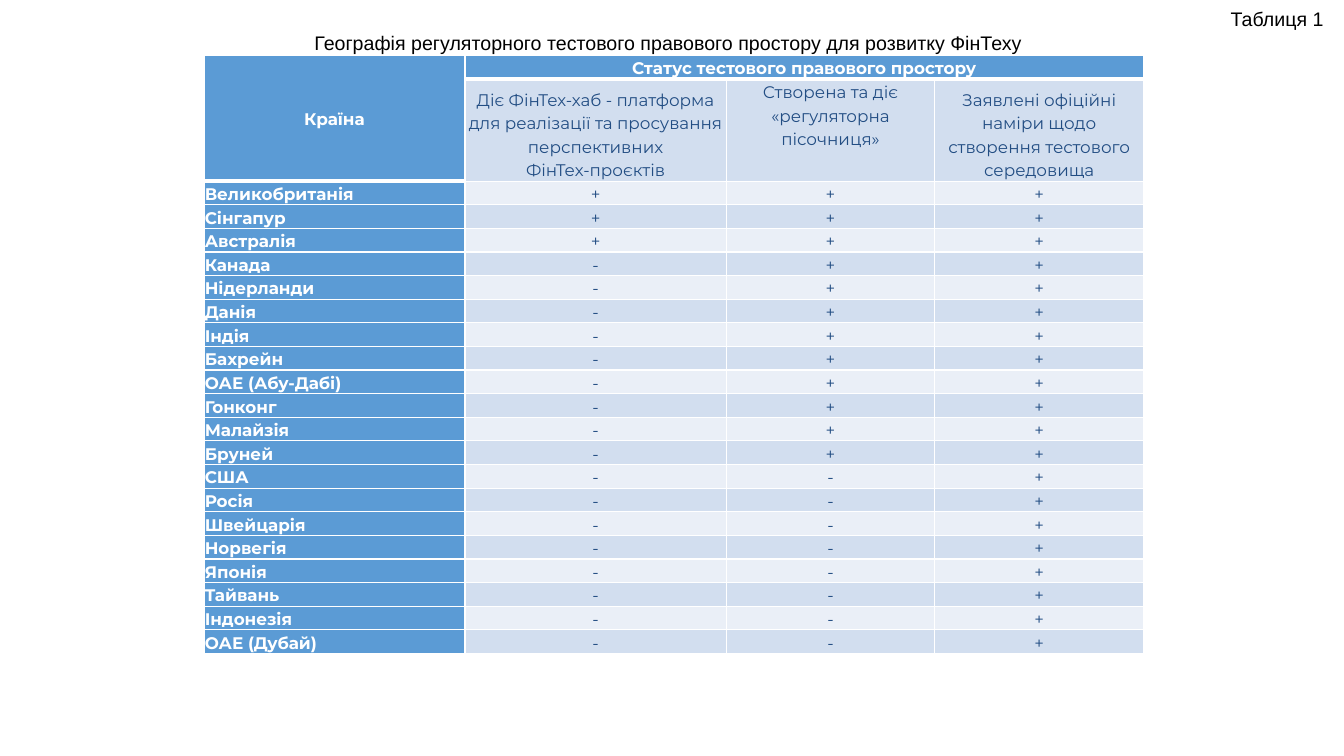
from lxml import etree
from pptx import Presentation, util as u
from pptx.dml import color
from pptx.enum import text
from pptx.oxml import ns

ALIGN = text.PP_ALIGN
ANCHOR = text.MSO_ANCHOR
BLUE, PALE, LIGHT, NAVY = "5B9BD5", "D2DEEF", "EAEFF7", "224D83"
WHITE, BLACK = "FFFFFF", "000000"

LANDS = [
    "Великобританія", "Сінгапур", "Австралія", "Канада", "Нідерланди",
    "Данія", "Індія", "Бахрейн", "ОАЕ (Абу-Дабі)", "Гонконг", "Малайзія",
    "Бруней", "США", "Росія", "Швейцарія", "Норвегія", "Японія", "Тайвань",
    "Індонезія", "ОАЕ (Дубай)",
]
HEADS = [
    ("Діє ФінТех-хаб - платформа для реалізації та просування перспективних\n"
     "ФінТех-проєктів", ANCHOR.BOTTOM),
    ("Створена та діє «регуляторна пісочниця»", ANCHOR.TOP),
    ("Заявлені офіційні наміри щодо створення тестового середовища",
     ANCHOR.BOTTOM),
]
COUNTS = [3, 12, 20]
WIDTHS = [6.58, 6.58, 5.26, 5.26]
HEADER = {"hue": WHITE, "bold": True}


def rgb(code):
    return color.RGBColor.from_string(code)


def assign(item, form):
    for name, value in form.items():
        setattr(item, name, value)


class Page:
    def __init__(self, deck):
        self.slide = deck.slides.add_slide(deck.slide_layouts[6])
        self.font = {"name": "Montserrat", "size": u.Pt(12)}
        self.label = {"name": "Arial", "size": u.Pt(14)}
        self.inset = {"margin_left": u.Cm(0.02), "margin_right": u.Cm(0.02),
                      "margin_top": 0, "margin_bottom": 0}

    def style(self, para, font, hue, align, bold=False):
        para.alignment = align
        assign(para.font, {**font, "bold": bold})
        para.font.color.rgb = rgb(hue)

    def caption(self, box, lines):
        frame = self.slide.shapes.add_textbox(*map(u.Cm, box)).text_frame
        assign(frame, {"word_wrap": True, "margin_top": u.Cm(0.18),
                       "vertical_anchor": ANCHOR.TOP})
        frame.text = "\n".join(words for words, _ in lines)
        for para, (_, align) in zip(frame.paragraphs, lines):
            para._p.get_or_add_pPr().set("indent", str(u.Cm(0.66)))
            self.style(para, self.label, BLACK, align)

    def grid(self, box, widths, heights):
        frame = self.slide.shapes.add_table(
            len(heights), len(widths), *map(u.Cm, box))
        table = frame.table
        for col, width in zip(table.columns, widths):
            col.width = u.Cm(width)
        for row, height in zip(table.rows, heights):
            row.height = u.Cm(height)
        return table

    def edge(self, cell, base):
        props = cell._tc.get_or_add_tcPr()
        for spot, side in enumerate(("lnL", "lnR", "lnT", "lnB")):
            line = etree.Element(ns.qn("a:" + side))
            line.set("w", str(u.Pt(base if side == "lnB" else 1)))
            fill = etree.SubElement(line, ns.qn("a:solidFill"))
            etree.SubElement(fill, ns.qn("a:srgbClr")).set("val", WHITE)
            props.insert(spot, line)

    def cell(self, cell, words, fill, hue=NAVY, bold=False,
             align=ALIGN.CENTER, anchor=ANCHOR.TOP, base=1):
        assign(cell, {**self.inset, "vertical_anchor": anchor})
        cell.fill.solid()
        cell.fill.fore_color.rgb = rgb(fill)
        self.edge(cell, base)
        cell.text = words
        for para in cell.text_frame.paragraphs:
            para.line_spacing = 1.15
            self.style(para, self.font, hue, align, bold)


def main():
    deck = Presentation()
    assign(deck, {"slide_width": u.Cm(33.87), "slide_height": u.Cm(19.05)})
    page = Page(deck)
    heights = [0.48, 2.57] + [0.48] * len(LANDS)
    table = page.grid((5.14, 1.4, sum(WIDTHS), sum(heights)), WIDTHS, heights)

    top = {**HEADER, "anchor": ANCHOR.MIDDLE, "base": 3}
    titles = ["Країна", "Статус тестового правового простору", "", ""]
    for col, words in enumerate(titles):
        page.cell(table.cell(0, col), words, BLUE, **top)
    page.cell(table.cell(1, 0), "", BLUE, **top)
    table.cell(0, 0).merge(table.cell(1, 0))
    table.cell(0, 1).merge(table.cell(0, 3))
    for col, (words, anchor) in enumerate(HEADS, 1):
        page.cell(table.cell(1, col), words, PALE, anchor=anchor)

    for row, land in enumerate(LANDS):
        page.cell(table.cell(row + 2, 0), land, BLUE, align=ALIGN.LEFT,
                  **HEADER)
        for col, count in enumerate(COUNTS, 1):
            page.cell(table.cell(row + 2, col), "+" if row < count else "-",
                      PALE if row % 2 else LIGHT)

    page.caption((-0.58, 0, 34.19, 2.24), [
        ("Таблиця 1", ALIGN.RIGHT),
        ("Географія регуляторного тестового правового простору "
         "для розвитку ФінТеху", ALIGN.CENTER),
    ])
    deck.save("out.pptx")


if __name__ == "__main__":
    main()
